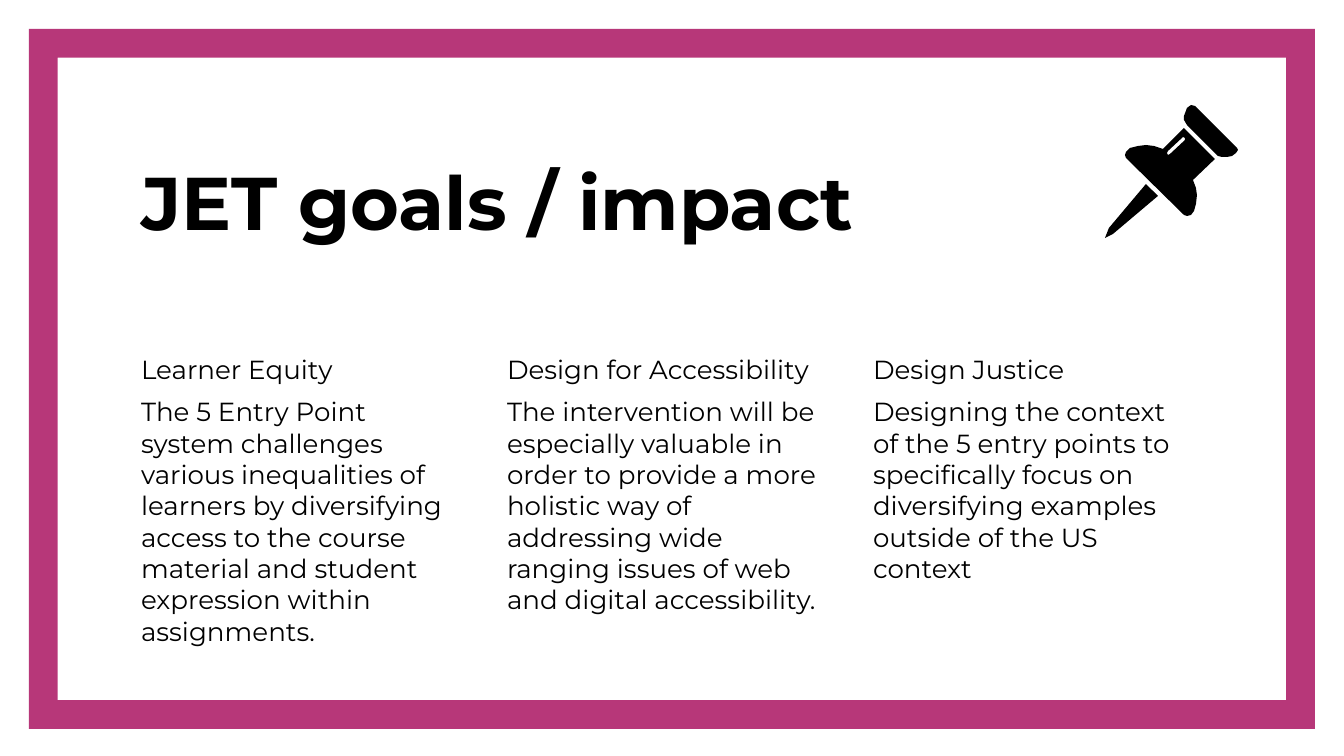
"""Build the goals and impact slide with three columns and a pushpin."""
from pptx import Presentation
from pptx.dml.color import RGBColor
from pptx.enum.shapes import MSO_SHAPE as Shape
from pptx.enum.text import MSO_ANCHOR as Anchor, MSO_AUTO_SIZE as AutoSize, PP_ALIGN as Align
from pptx.util import Pt

SCALE = 914400 / 134.4
FONT = "Montserrat"
COLOURS = {"frame": "B73779", "ink": "000000"}

TITLE = "JET goals / impact"
COLUMNS = [
    ("Learner Equity",
     "The 5 Entry Point system challenges various inequalities of learners by "
     "diversifying access to the course material and student expression within assignments."),
    ("Design for Accessibility",
     "The intervention will be especially valuable in order to provide a more holistic "
     "way of addressing wide ranging issues of web and digital accessibility."),
    ("Design Justice",
     "Designing the context of the 5 entry points to specifically focus on diversifying "
     "examples outside of the US context"),
]

FRAME = (29, 29, 1286, 700)
TITLE_BOX = (128, 125, 840, 133)
COLUMN_BOX = (128, 340, 348, 300)
COLUMN_STEP = 366
INSET = 13

NEEDLE = [(1146, 184), (1109, 228), (1105, 238), (1113, 234), (1158, 196)]
CAP = [(1191, 105), (1187, 108), (1184, 116), (1184, 120), (1187, 125), (1218, 156),
       (1222, 157), (1227, 157), (1232, 156), (1236, 153), (1238, 150), (1237, 148),
       (1195, 106)]
BODY = [(1184, 128), (1163, 149), (1154, 146), (1146, 145), (1138, 146), (1130, 148),
        (1126, 152), (1125, 155), (1126, 158), (1184, 215), (1187, 216), (1191, 215),
        (1194, 211), (1196, 204), (1197, 195), (1196, 188), (1193, 180), (1215, 159)]
GLINT = [(1183, 137), (1185, 138), (1185, 140), (1170, 154), (1168, 155), (1167, 153),
         (1168, 151)]
PIN_PARTS = [[NEEDLE], [CAP], [BODY, GLINT]]


def px(value):
    return round(value * SCALE)


def paint(shape, colour):
    shape.shadow.inherit = False
    shape.fill.solid()
    shape.fill.fore_color.rgb = RGBColor.from_string(COLOURS[colour])
    shape.line.fill.background()


def write(box, paragraphs, size, bold=False, anchor=Anchor.TOP, before=0):
    frame = box.text_frame
    frame.word_wrap = True
    frame.auto_size = AutoSize.NONE
    frame.vertical_anchor = anchor
    frame.margin_left = frame.margin_right = px(INSET)
    frame.margin_top = frame.margin_bottom = px(INSET)
    for index, text in enumerate(paragraphs):
        para = frame.add_paragraph() if index else frame.paragraphs[0]
        para.alignment = Align.LEFT
        para.space_before = Pt(before)
        span = para.add_run()
        span.text = text
        span.font.name = FONT
        span.font.size = Pt(size)
        span.font.bold = bold
        span.font.color.rgb = RGBColor.from_string(COLOURS["ink"])


def draw_outline(page, contours, colour):
    first, *others = contours
    builder = page.shapes.build_freeform(*first[0], scale=SCALE)
    builder.add_line_segments(first[1:])
    for contour in others:
        builder.move_to(*contour[0])
        builder.add_line_segments(contour[1:])
    paint(builder.convert_to_shape(), colour)


def main():
    deck = Presentation()
    deck.slide_width, deck.slide_height = px(1344), px(756)
    page = deck.slides.add_slide(deck.slide_layouts[5])

    border = page.shapes.add_shape(Shape.FRAME, *map(px, FRAME))
    border.adjustments[0] = 0.041
    paint(border, "frame")

    title = page.shapes.title
    title.left, title.top, title.width, title.height = map(px, TITLE_BOX)
    write(title, [TITLE], size=40, bold=True, anchor=Anchor.BOTTOM)

    left, top, width, height = COLUMN_BOX
    for index, paragraphs in enumerate(COLUMNS):
        place = (left + index * COLUMN_STEP, top, width, height)
        box = page.shapes.add_textbox(*map(px, place))
        write(box, paragraphs, size=14, before=6)

    for contours in PIN_PARTS:
        draw_outline(page, contours, "ink")

    deck.save("out.pptx")


if __name__ == "__main__":
    main()
